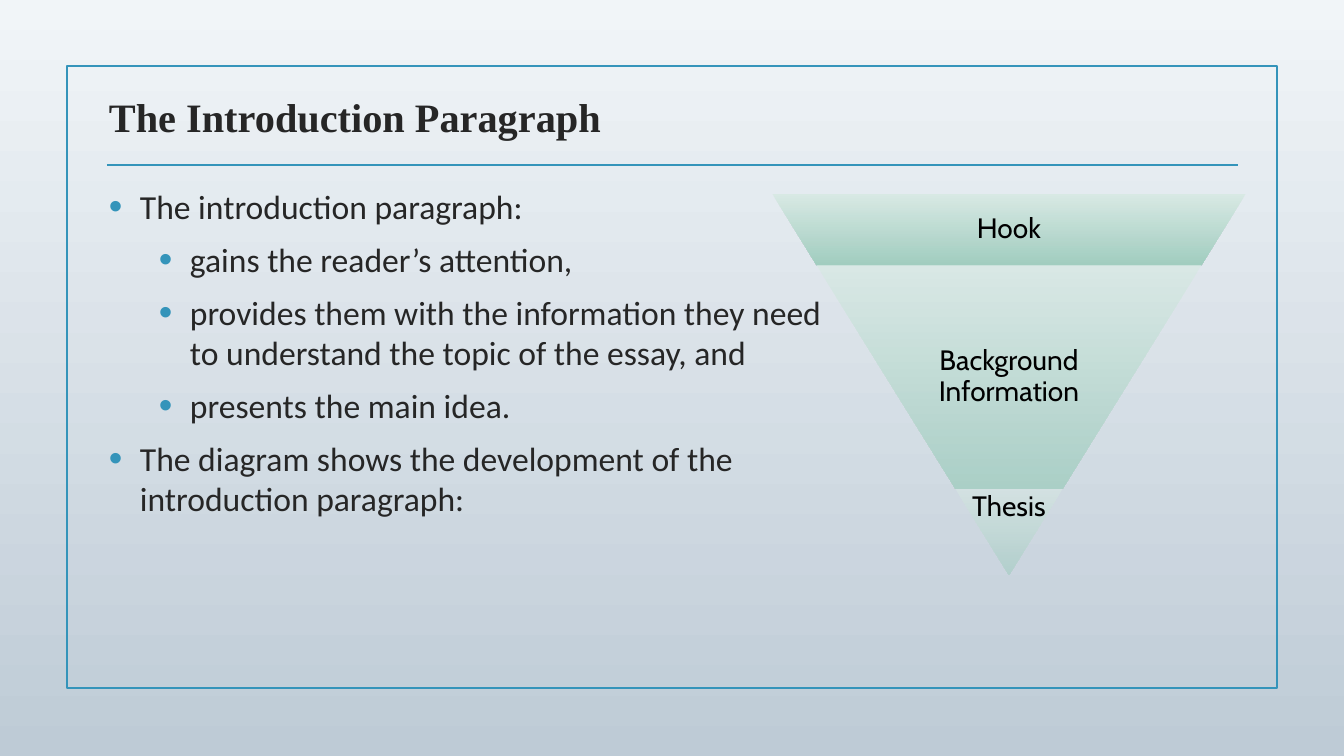
from dataclasses import dataclass

from lxml import etree
from pptx import Presentation
from pptx import util as u
from pptx.dml.color import RGBColor
from pptx.enum import shapes, text
from pptx.oxml.ns import qn

EMU_PER_PX = 12192000 / 1344


@dataclass(frozen=True)
class Theme:
    page: tuple = ("F1F5F8", "BECBD6")
    funnel: tuple = ("D7E9E3", "9BCBBB")
    accent: str = "3494BA"
    ink: str = "262626"
    label_ink: str = "000000"
    title_font: str = "Times New Roman"
    body_font: str = "Calibri"
    label_font: str = "Cabin"
    title_size: float = 28.8
    body_size: float = 24
    label_size: float = 20


THEME = Theme()

BULLETS = [
    (0, "The introduction paragraph:"),
    (1, "gains the reader’s attention,"),
    (1, "provides them with the information they need \vto understand the topic of the essay, and"),
    (1, "presents the main idea."),
    (0, "The diagram shows the development of the \vintroduction paragraph:"),
]

# label, height in px, opacity in percent, label width as a share, anchor
FUNNEL_STAGES = [
    ("Hook", 71, 90, 0.65, text.MSO_ANCHOR.MIDDLE),
    ("Background Information", 224, 70, 0.65, text.MSO_ANCHOR.MIDDLE),
    ("Thesis", 86, 50, 1, text.MSO_ANCHOR.TOP),
]
FUNNEL_CENTER, FUNNEL_TOP, FUNNEL_SLOPE = 1009, 194, 0.621


def px(value):
    return u.Emu(round(value * EMU_PER_PX))


def place(left, top, width, height):
    return px(left), px(top), px(width), px(height)


def style_runs(para, font, size, color, bold=False):
    for span in para.runs:
        span.font.name = font
        span.font.size = u.Pt(size)
        span.font.bold = bold
        span.font.color.rgb = RGBColor.from_string(color)


def fill_downward(fill, colors):
    """Fill with a gradient that runs from top to bottom."""
    fill.gradient()
    fill.gradient_angle = 270
    for stop, color in zip(fill.gradient_stops, colors):
        stop.color.rgb = RGBColor.from_string(color)


def add_text_box(page, bounds, anchor=text.MSO_ANCHOR.TOP):
    box = page.shapes.add_textbox(*place(*bounds))
    box.text_frame.word_wrap = True
    box.text_frame.vertical_anchor = anchor
    return box


def add_frame(page):
    frame = page.shapes.add_shape(shapes.MSO_SHAPE.RECTANGLE, *place(67, 66, 1210, 622))
    frame.shadow.inherit = False
    frame.fill.background()
    frame.line.color.rgb = RGBColor.from_string(THEME.accent)
    frame.line.width = u.Pt(1.25)


def add_title_rule(page):
    rule = page.shapes.add_connector(
        shapes.MSO_CONNECTOR.STRAIGHT, px(107), px(165), px(1238), px(165))
    rule.line.color.rgb = RGBColor.from_string(THEME.accent)
    rule.line.width = u.Pt(1.5)
    etree.SubElement(rule._element.spPr, qn("a:effectLst"))


def add_title(page):
    box = add_text_box(page, (99, 85, 1146, 62), text.MSO_ANCHOR.MIDDLE)
    box.text_frame.text = "The Introduction Paragraph"
    style_runs(box.text_frame.paragraphs[0], THEME.title_font, THEME.title_size,
               THEME.ink, bold=True)


def add_bullet(para, level):
    properties = para._p.get_or_add_pPr()
    properties.set("marL", str(px(31 + 50 * level)))
    properties.set("indent", str(px(-31)))
    color = etree.SubElement(properties, qn("a:buClr"))
    etree.SubElement(color, qn("a:srgbClr"), val=THEME.accent)
    etree.SubElement(properties, qn("a:buSzPct"), val="115000")
    etree.SubElement(properties, qn("a:buFont"), typeface="Arial")
    etree.SubElement(properties, qn("a:buChar"), char="•")


def add_body(page):
    frame = add_text_box(page, (99, 181, 1146, 490)).text_frame
    for index, (level, wording) in enumerate(BULLETS):
        para = frame.add_paragraph() if index else frame.paragraphs[0]
        para.text = wording
        para.level = level
        add_bullet(para, level)
        para.space_before = u.Pt(3 if index else 0)
        para.space_after = u.Pt(6)
        style_runs(para, THEME.body_font, THEME.body_size, THEME.ink)


def add_funnel_band(page, top, width, height, opacity):
    band = page.shapes.add_shape(
        shapes.MSO_SHAPE.TRAPEZOID, *place(FUNNEL_CENTER - width / 2, top, width, height))
    band.rotation = 180
    band.adjustments[0] = FUNNEL_SLOPE
    band.shadow.inherit = False
    band.line.fill.background()
    fill_downward(band.fill, THEME.funnel)
    gradient = band._element.spPr.find(qn("a:gradFill"))
    gradient.set("rotWithShape", "0")
    for color in gradient.iter(qn("a:srgbClr")):
        etree.SubElement(color, qn("a:alpha"), val=str(opacity * 1000))


def add_funnel_label(page, wording, top, width, height, anchor):
    bounds = (FUNNEL_CENTER - width / 2, top, width, height)
    frame = add_text_box(page, bounds, anchor).text_frame
    frame.margin_left = frame.margin_right = px(3)
    frame.margin_top = frame.margin_bottom = px(3)
    frame.text = wording
    para = frame.paragraphs[0]
    para.alignment = text.PP_ALIGN.CENTER
    para.line_spacing = 0.9
    style_runs(para, THEME.label_font, THEME.label_size, THEME.label_ink)


def add_funnel(page):
    """Stack the stages so that their sides meet in one tip at the bottom."""
    top = FUNNEL_TOP
    tip = top + sum(stage[1] for stage in FUNNEL_STAGES)
    for wording, height, opacity, share, anchor in FUNNEL_STAGES:
        width = round(2 * FUNNEL_SLOPE * (tip - top))
        add_funnel_band(page, top, width, height, opacity)
        add_funnel_label(page, wording, top, round(width * share), height, anchor)
        top += height


def main():
    deck = Presentation()
    deck.slide_width, deck.slide_height = px(1344), px(756)
    page = deck.slides.add_slide(deck.slide_layouts[6])
    fill_downward(page.background.fill, THEME.page)
    add_frame(page)
    add_title_rule(page)
    add_title(page)
    add_body(page)
    add_funnel(page)
    deck.save("out.pptx")


if __name__ == "__main__":
    main()
